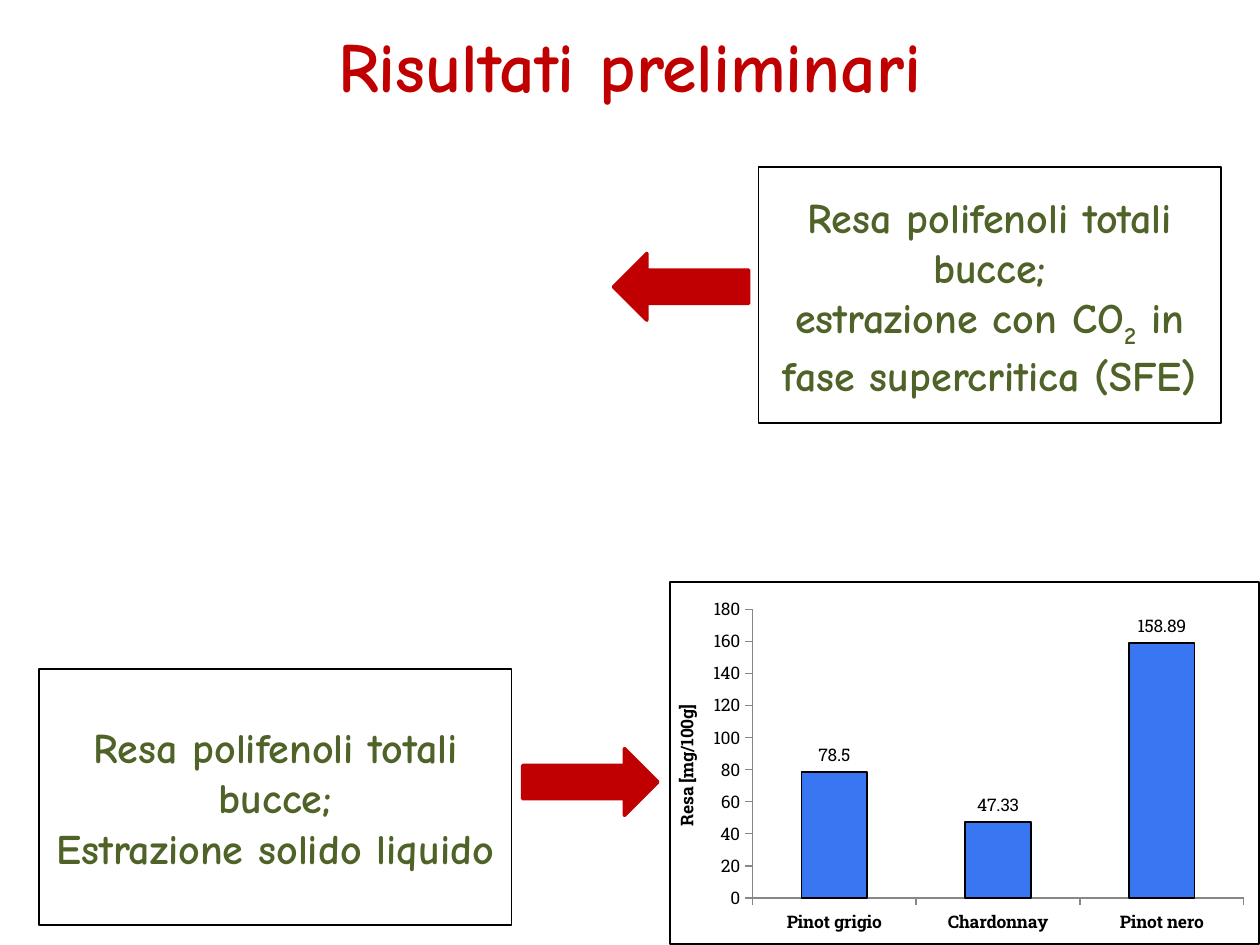
from lxml import etree
from pptx import Presentation, util as u
from pptx.chart.data import CategoryChartData
from pptx.dml.color import RGBColor
from pptx.enum import chart as charts, shapes, text
from pptx.oxml import parse_xml

THEME = {
    "red": RGBColor(0xC0, 0x00, 0x00),
    "green": RGBColor(0x4F, 0x62, 0x28),
    "blue": RGBColor(0x39, 0x76, 0xF1),
    "grey": RGBColor(0x87, 0x87, 0x87),
    "black": RGBColor(0, 0, 0),
    "white": RGBColor(255, 255, 255),
    "hand": "Comic Neue",
    "slab": "Roboto Slab",
    "title": u.Pt(40),
    "body": u.Pt(24),
    "chart": u.Pt(10),
}

deck = Presentation()
deck.slide_width, deck.slide_height = u.Inches(10), u.Inches(7.5)
page = deck.slides.add_slide(deck.slide_layouts[5])


def area(left, top, width, height):
    """Turn shares of the slide's size into lengths."""
    across, down = deck.slide_width, deck.slide_height
    return [int(share * side) for share, side in
            zip((left, top, width, height), (across, down, across, down))]


def style(font, size, color, name, bold=False):
    for key, value in {"size": size, "name": name, "bold": bold}.items():
        setattr(font, key, value)
    font.color.rgb = color


# Title
title = page.shapes.title
title.left, title.top, title.width, title.height = area(0, 0, 1, 0.136)
title.text_frame.vertical_anchor = text.MSO_ANCHOR.MIDDLE
para = title.text_frame.paragraphs[0]
para.alignment = text.PP_ALIGN.CENTER
span = para.add_run()
span.text = "Risultati preliminari"
style(span.font, THEME["title"], THEME["red"], THEME["hand"], True)

# Captions: each line is a list of (text, baseline shift) spans
first_line = [("Resa polifenoli totali bucce;", 0)]
captions = [
    (area(0.602, 0.177, 0.367, 0.271),
     [first_line, [("estrazione con CO", 0), ("2", -25000),
                   (" in fase supercritica (SFE)", 0)]]),
    (area(0.031, 0.708, 0.375, 0.271),
     [first_line, [("Estrazione solido liquido", 0)]]),
]
for place, lines in captions:
    box = page.shapes.add_shape(shapes.MSO_SHAPE.RECTANGLE, *place)
    box.shadow.inherit = False
    box.fill.solid()
    box.fill.fore_color.rgb = THEME["white"]
    box.line.color.rgb = THEME["black"]
    box.line.width = u.Pt(1)
    frame = box.text_frame
    frame.word_wrap = True
    frame.vertical_anchor = text.MSO_ANCHOR.MIDDLE
    for number, line in enumerate(lines):
        para = frame.add_paragraph() if number else frame.paragraphs[0]
        para.alignment = text.PP_ALIGN.CENTER
        for words, shift in line:
            span = para.add_run()
            span.text = words
            style(span.font, THEME["body"], THEME["green"], THEME["hand"], True)
            if shift:
                span._r.get_or_add_rPr().set("baseline", str(shift))

# Chart
data = CategoryChartData()
data.categories = ["Pinot grigio", "Chardonnay", "Pinot nero"]
data.add_series("Series 1", [78.5, 47.33, 158.89])
chart = page.shapes.add_chart(charts.XL_CHART_TYPE.COLUMN_CLUSTERED,
                              *area(0.531, 0.615, 0.469, 0.385), data).chart
chart.has_legend = chart.has_title = False
style(chart.font, THEME["chart"], THEME["black"], THEME["slab"])

values, categories = chart.value_axis, chart.category_axis
values.minimum_scale, values.maximum_scale, values.major_unit = 0, 180, 20
values.has_major_gridlines = False
for axis, bold in ((values, False), (categories, True)):
    axis.major_tick_mark = charts.XL_TICK_MARK.OUTSIDE
    axis.format.line.color.rgb = THEME["grey"]
    style(axis.tick_labels.font, THEME["chart"], THEME["black"], THEME["slab"], bold)
span = values.axis_title.text_frame.paragraphs[0].add_run()
span.text = "Resa [mg/100g]"
style(span.font, THEME["chart"], THEME["black"], THEME["slab"], True)

plot = chart.plots[0]
plot.gap_width = 150
plot.vary_by_categories = False
plot.has_data_labels = True
labels = plot.data_labels
labels.show_value = True
labels.position = charts.XL_LABEL_POSITION.OUTSIDE_END
style(labels.font, THEME["chart"], THEME["black"], THEME["slab"])
bars = plot.series[0].format
bars.fill.solid()
bars.fill.fore_color.rgb = THEME["blue"]
bars.line.color.rgb = THEME["black"]
bars.line.width = u.Pt(1)

# Plot area position and chart frame
C = "http://schemas.openxmlformats.org/drawingml/2006/chart"
A = "http://schemas.openxmlformats.org/drawingml/2006/main"
root = chart._chartSpace.find(f"{{{C}}}chart")
plot_area = root.find(f"{{{C}}}plotArea")
for old in plot_area.findall(f"{{{C}}}layout"):
    plot_area.remove(old)
layout = parse_xml(f'<c:layout xmlns:c="{C}"><c:manualLayout/></c:layout>')
for tag, value in [("layoutTarget", "inner"), ("xMode", "edge"), ("yMode", "edge"),
                   ("x", 0.14), ("y", 0.075), ("w", 0.834), ("h", 0.798)]:
    etree.SubElement(layout[0], f"{{{C}}}{tag}").set("val", str(value))
plot_area.insert(0, layout)
root.addnext(parse_xml(
    f'<c:spPr xmlns:c="{C}" xmlns:a="{A}">'
    f'<a:solidFill><a:srgbClr val="{THEME["white"]}"/></a:solidFill>'
    f'<a:ln w="{u.Pt(1)}"><a:solidFill><a:srgbClr val="{THEME["black"]}"/>'
    '</a:solidFill></a:ln></c:spPr>'))

# Arrows between captions and results
for left, top, turn in ((0.514, 0.232, 90), (0.442, 0.756, 270)):
    arrow = page.shapes.add_shape(shapes.MSO_SHAPE.DOWN_ARROW,
                                  *area(left, top, 0.053, 0.143))
    arrow.rotation = turn
    arrow.shadow.inherit = False
    arrow.fill.solid()
    arrow.fill.fore_color.rgb = THEME["red"]
    arrow.line.color.rgb = THEME["red"]
    arrow.line.width = u.Pt(2)

deck.save("out.pptx")
